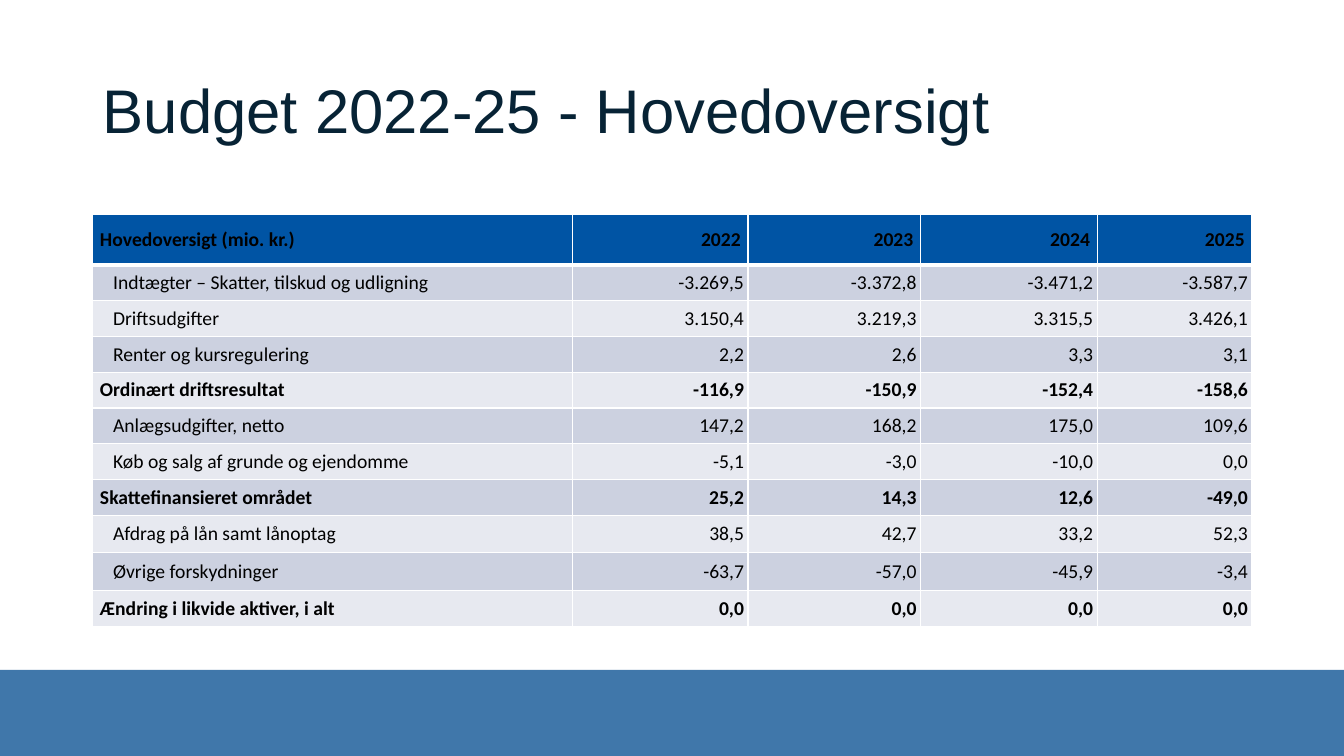
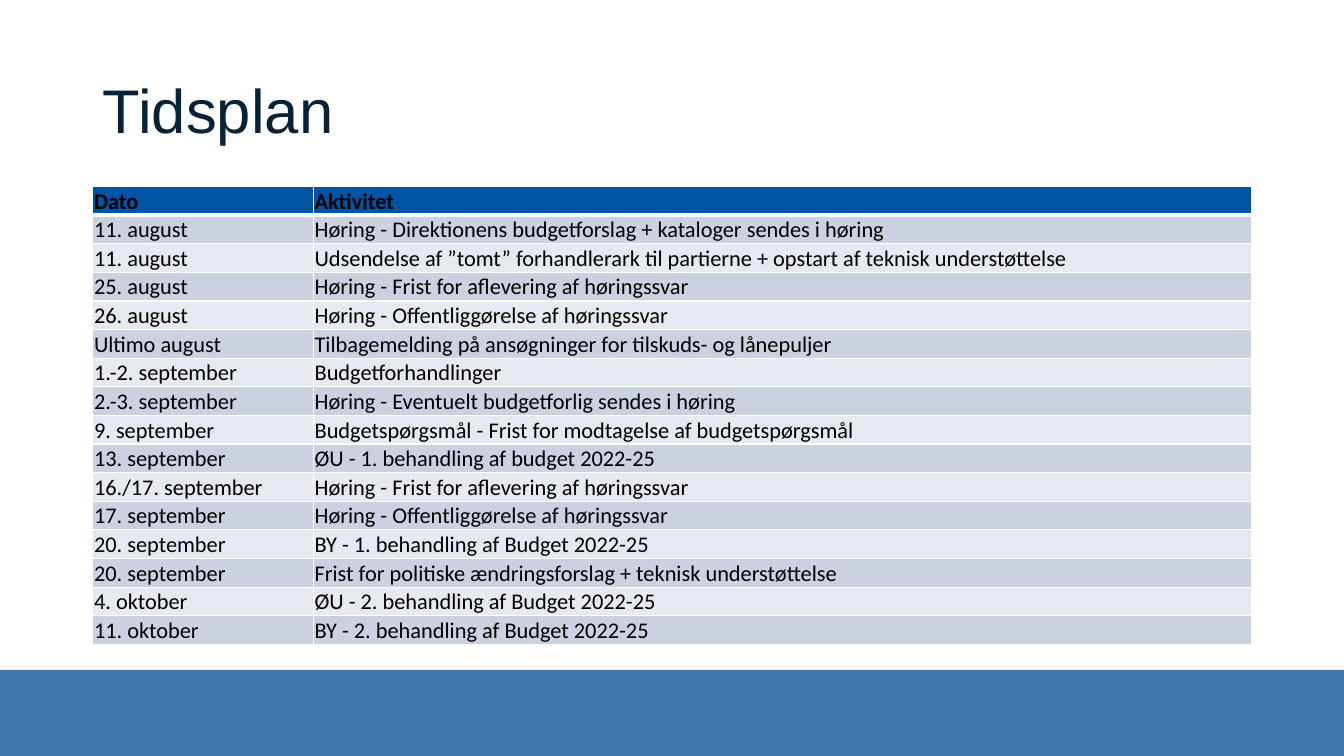
from lxml import etree
from pptx import Presentation
from pptx.dml.color import RGBColor
from pptx.enum import shapes, text
from pptx.oxml import ns
from pptx.util import Cm, Pt

COLORS = {
    "title": "072335", "text": "000000", "band": "004A8E", "header": "0054A4",
    "odd": "CCD1E0", "even": "E7E9F0", "border": "FFFFFF",
}
LEFT, WIDTH = 2.34, 29.21
INDENT = 0.33  # extra left margin of sub-items, in cm


def rgb(name):
    return RGBColor.from_string(COLORS[name])


def apply(obj, **values):
    for name, value in values.items():
        setattr(obj, name, value)


class Deck:
    """Holds the shared style and the current slide."""

    def __init__(self):
        self.prs = Presentation()
        apply(self.prs, slide_width=Cm(33.87), slide_height=Cm(19.05))
        self.s = None

    def slide(self, title):
        self.s = self.prs.slides.add_slide(self.prs.slide_layouts[5])
        self.band()
        self.title(title)

    def band(self):
        sp = self.s.shapes.add_shape(shapes.MSO_SHAPE.RECTANGLE, 0, Cm(16.88),
                                     self.prs.slide_width, Cm(2.17))
        sp.shadow.inherit = False
        sp.line.fill.background()
        sp.fill.solid()
        sp.fill.fore_color.rgb = rgb("band")
        color = sp.fill._xPr.find(".//" + ns.qn("a:srgbClr"))
        etree.SubElement(color, ns.qn("a:alpha"), val="75000")

    def title(self, wording):
        sp = self.s.shapes.title
        apply(sp, left=Cm(LEFT), top=Cm(1.02), width=Cm(WIDTH), height=Cm(3.68))
        tf = sp.text_frame
        tf.text = wording
        apply(tf, vertical_anchor=text.MSO_ANCHOR.MIDDLE, word_wrap=True)
        p = tf.paragraphs[0]
        apply(p, alignment=text.PP_ALIGN.LEFT, line_spacing=0.9)
        apply(p.runs[0].font, name="Arial", size=Pt(44))
        p.runs[0].font.color.rgb = rgb("title")

    def table(self, top, cols, heights, rows, style):
        """Fill a table; style(row, col) gives margins, anchor, alignment and font."""
        frame = self.s.shapes.add_table(len(rows), len(cols), Cm(LEFT), Cm(top),
                                        Cm(sum(cols)), Cm(sum(heights)))
        table = frame.table
        table.horz_banding = False
        for column, width in zip(table.columns, cols):
            column.width = Cm(width)
        for i, (row, height) in enumerate(zip(rows, heights)):
            table.rows[i].height = Cm(height)
            for j, wording in enumerate(row):
                self.cell(table.cell(i, j), wording, i, **style(i, j))

    def cell(self, cell, wording, row, box, align, font):
        self.borders(cell, top=3 if row == 1 else 1, bottom=3 if row == 0 else 1)
        apply(cell, **box)
        cell.fill.solid()
        fill = "header" if row == 0 else "odd" if row % 2 else "even"
        cell.fill.fore_color.rgb = rgb(fill)
        p = cell.text_frame.paragraphs[0]
        p.alignment = align
        r = p.add_run()
        r.text = wording
        apply(r.font, name="Calibri", **font)
        r.font.color.rgb = rgb("text")

    def borders(self, cell, top, bottom):
        tc_pr = cell._tc.get_or_add_tcPr()
        for side, width in (("L", 1), ("R", 1), ("T", top), ("B", bottom)):
            ln = etree.SubElement(tc_pr, ns.qn("a:ln" + side), w=str(Pt(width)))
            fill = etree.SubElement(ln, ns.qn("a:solidFill"))
            etree.SubElement(fill, ns.qn("a:srgbClr"), val=COLORS["border"])


BUDGET = [
    ("Hovedoversigt (mio. kr.)", "2022", "2023", "2024", "2025"),
    ("Indtægter – Skatter, tilskud og udligning", "-3.269,5", "-3.372,8", "-3.471,2", "-3.587,7"),
    ("Driftsudgifter", "3.150,4", "3.219,3", "3.315,5", "3.426,1"),
    ("Renter og kursregulering", "2,2", "2,6", "3,3", "3,1"),
    ("Ordinært driftsresultat", "-116,9", "-150,9", "-152,4", "-158,6"),
    ("Anlægsudgifter, netto", "147,2", "168,2", "175,0", "109,6"),
    ("Køb og salg af grunde og ejendomme", "-5,1", "-3,0", "-10,0", "0,0"),
    ("Skattefinansieret området", "25,2", "14,3", "12,6", "-49,0"),
    ("Afdrag på lån samt lånoptag", "38,5", "42,7", "33,2", "52,3"),
    ("Øvrige forskydninger", "-63,7", "-57,0", "-45,9", "-3,4"),
    ("Ændring i likvide aktiver, i alt", "0,0", "0,0", "0,0", "0,0"),
]
TOTAL_ROWS = {0, 4, 7, 10}

SCHEDULE = [
    ("Dato", "Aktivitet"),
    ("11. august", "Høring - Direktionens budgetforslag + kataloger sendes i høring"),
    ("11. august", "Udsendelse af ”tomt” forhandlerark til partierne + opstart af teknisk understøttelse"),
    ("25. august", "Høring - Frist for aflevering af høringssvar"),
    ("26. august", "Høring - Offentliggørelse af høringssvar"),
    ("Ultimo august", "Tilbagemelding på ansøgninger for tilskuds- og lånepuljer"),
    ("1.-2. september", "Budgetforhandlinger"),
    ("2.-3. september", "Høring - Eventuelt budgetforlig sendes i høring"),
    ("9. september", "Budgetspørgsmål - Frist for modtagelse af budgetspørgsmål"),
    ("13. september", "ØU - 1. behandling af budget 2022-25"),
    ("16./17. september", "Høring - Frist for aflevering af høringssvar"),
    ("17. september", "Høring - Offentliggørelse af høringssvar"),
    ("20. september", "BY - 1. behandling af Budget 2022-25"),
    ("20. september", "Frist for politiske ændringsforslag + teknisk understøttelse"),
    ("4. oktober", "ØU - 2. behandling af Budget 2022-25"),
    ("11. oktober", "BY - 2. behandling af Budget 2022-25"),
]


def budget_style(row, col):
    bold = row in TOTAL_ROWS
    left = 0.18 + (INDENT if col == 0 and not bold else 0)
    right = 0.1 if row and col else 0.18
    return {
        "box": dict(margin_left=Cm(left), margin_right=Cm(right), margin_top=0,
                    margin_bottom=0, vertical_anchor=text.MSO_ANCHOR.MIDDLE),
        "align": text.PP_ALIGN.RIGHT if col else text.PP_ALIGN.LEFT,
        "font": dict(size=Pt(14), bold=bold),
    }


def schedule_style(row, col):
    return {
        "box": dict(margin_left=Cm(0.03), margin_right=Cm(0.03), margin_top=Cm(0.03),
                    margin_bottom=0, vertical_anchor=text.MSO_ANCHOR.BOTTOM),
        "align": text.PP_ALIGN.LEFT,
        "font": dict(size=Pt(16), bold=row == 0),
    }


def main():
    deck = Deck()
    deck.slide("Budget 2022-25 - Hovedoversigt")
    deck.table(5.41, [12.09, 4.42, 4.35, 4.45, 3.9],
               [1.27] + [0.9] * 7 + [0.95] * 2 + [0.9], BUDGET, budget_style)
    deck.slide("Tidsplan")
    deck.table(4.7, [5.56, 23.65], [0.7] * len(SCHEDULE), SCHEDULE, schedule_style)
    deck.prs.save("out.pptx")


if __name__ == "__main__":
    main()
